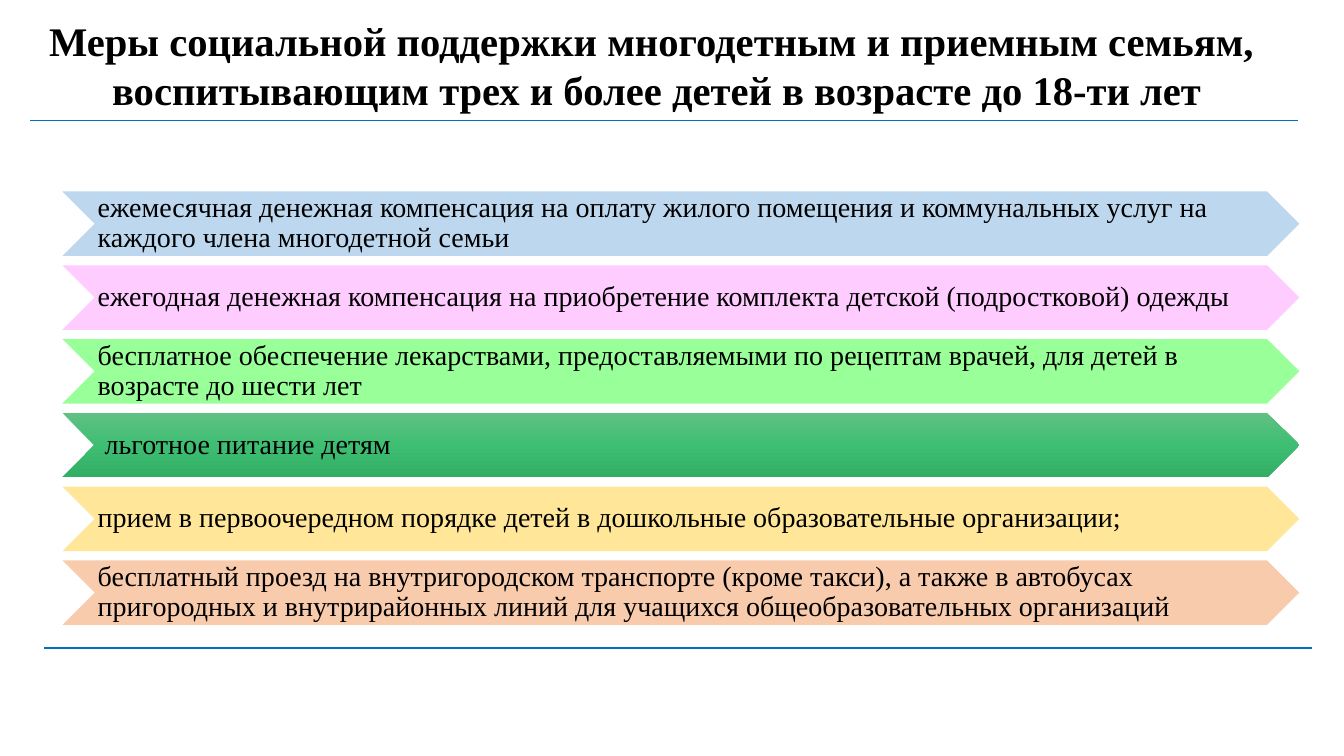
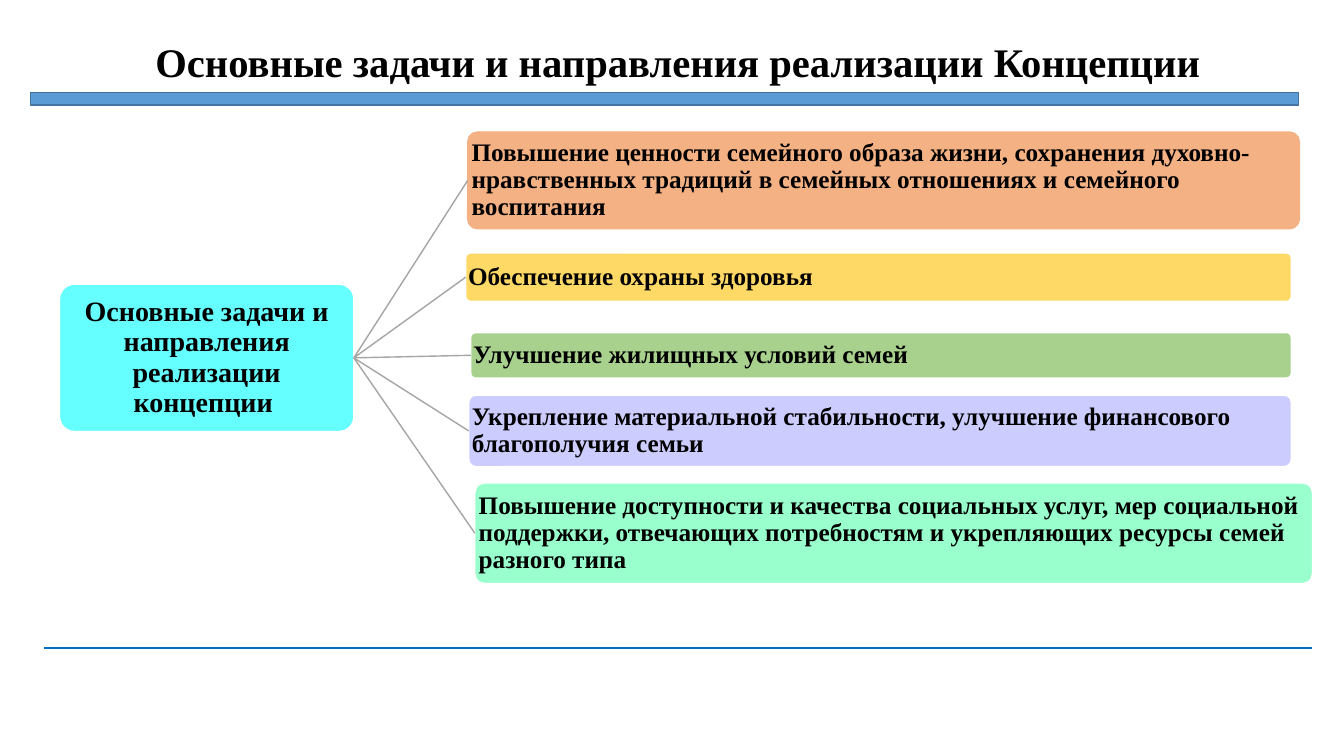
from copy import deepcopy
from dataclasses import dataclass

from pptx import Presentation
from pptx import util as u
from pptx.dml.color import RGBColor
from pptx.enum import shapes, text
from pptx.oxml import ns
from pptx.oxml.xmlchemy import OxmlElement


@dataclass(frozen=True)
class Theme:
    font: str = "Times New Roman"
    ink: str = "000000"
    paper: str = "FFFFFF"
    rule: str = "0070C0"
    bar: str = "5B9BD5"
    bar_edge: str = "43739E"
    link: str = "A5A5A5"
    title_size: int = 29
    large_size: int = 20
    body_size: int = 18
    line_width: int = 1
    tight: float = 0.9


class Board:
    """Draws on the current slide; lengths are percentages of its width and height."""

    RULE_WIDTH = 94.35
    HEAD_LEFT = 2.25
    FOOT_LEFT = 3.3

    def __init__(self, theme):
        self.theme = theme
        self.deck = Presentation()
        self.deck.slide_width, self.deck.slide_height = u.Inches(13.33), u.Inches(7.5)
        self.page = None

    def x(self, share):
        return round(self.deck.slide_width * share / 100)

    def y(self, share):
        return round(self.deck.slide_height * share / 100)

    def place(self, left, top, width, height):
        return self.x(left), self.y(top), self.x(width), self.y(height)

    def new_page(self, title, area, anchor=text.MSO_ANCHOR.MIDDLE, spacing=1.0):
        self.page = self.deck.slides.add_slide(self.deck.slide_layouts[5])
        box = self.page.shapes.title
        box.left, box.top, box.width, box.height = self.place(*area)
        box.text_frame.auto_size = text.MSO_AUTO_SIZE.NONE
        self.set_text(box, title, self.theme.title_size, True,
                      text.PP_ALIGN.CENTER, anchor, spacing)
        self.rule(self.FOOT_LEFT, 85.73)

    def set_text(self, box, words, size, bold, align, anchor, spacing):
        frame = box.text_frame
        frame.text = words
        frame.word_wrap = True
        frame.vertical_anchor = anchor
        for para in frame.paragraphs:
            para.alignment = align
            para.line_spacing = spacing
            para.space_before = u.Pt(0)
            for span in para.runs:
                span.font.name = self.theme.font
                span.font.size = u.Pt(size)
                span.font.bold = bold
                span.font.color.rgb = RGBColor.from_string(self.theme.ink)

    def paint(self, shape, colours):
        """Fill with one colour, or with a top-down gradient of three."""
        fill = shape.fill
        if len(colours) == 1:
            fill.solid()
            fill.fore_color.rgb = RGBColor.from_string(colours[0])
            return
        fill.gradient()
        fill.gradient_angle = 270
        stops = shape._element.spPr.find(".//" + ns.qn("a:gsLst"))
        stops.insert(1, deepcopy(stops[0]))
        for index, (stop, colour) in enumerate(zip(fill.gradient_stops, colours)):
            stop.color.rgb = RGBColor.from_string(colour)
            stop.position = index / 2

    def stroke(self, line, colour):
        line.color.rgb = RGBColor.from_string(colour)
        line.width = u.Pt(self.theme.line_width)

    def shape(self, kind, area, colours, edge=None):
        shape = self.page.shapes.add_shape(kind, *self.place(*area))
        shape.shadow.inherit = False
        self.paint(shape, colours)
        if edge:
            self.stroke(shape.line, edge)
        else:
            shape.line.fill.background()
        return shape

    def label(self, shape, words, size, bold=False, align=text.PP_ALIGN.LEFT, left=0.01):
        frame = shape.text_frame
        frame.margin_left = u.Inches(left)
        frame.margin_right = frame.margin_top = frame.margin_bottom = u.Inches(0.01)
        self.set_text(shape, words, size, bold, align, text.MSO_ANCHOR.MIDDLE,
                      self.theme.tight)

    def chevron(self, area, words, colours):
        shape = self.shape(shapes.MSO_SHAPE.CHEVRON, area, colours)
        self.label(shape, words, self.theme.large_size, left=0.03)

    def card(self, area, words, colour, size, align=text.PP_ALIGN.LEFT, edge=None):
        shape = self.shape(shapes.MSO_SHAPE.ROUNDED_RECTANGLE, area, [colour],
                           edge or self.theme.paper)
        shape.adjustments[0] = 0.1
        self.label(shape, words, size, True, align)
        return shape

    def bar(self, top, height):
        self.shape(shapes.MSO_SHAPE.RECTANGLE, (self.HEAD_LEFT, top, self.RULE_WIDTH, height),
                   [self.theme.bar], self.theme.bar_edge)

    def line(self, colour, start=(0, 0), end=(0, 0)):
        line = self.page.shapes.add_connector(shapes.MSO_CONNECTOR.STRAIGHT, *start, *end)
        self.stroke(line.line, colour)
        line._element.spPr.append(OxmlElement("a:effectLst"))
        return line

    def rule(self, left, top):
        self.line(self.theme.rule, (self.x(left), self.y(top)),
                  (self.x(left + self.RULE_WIDTH), self.y(top)))

    def link(self, source, target):
        """Join the right side of one card to the left side of another."""
        line = self.line(self.theme.link)
        line.begin_connect(source, 3)
        line.end_connect(target, 1)


MEASURES = [
    ("ежемесячная денежная компенсация на оплату жилого помещения и коммунальных услуг "
     "на каждого члена многодетной семьи", ["BDD7EE"]),
    ("ежегодная денежная компенсация на приобретение комплекта детской (подростковой) одежды",
     ["FFCCFF"]),
    ("бесплатное обеспечение лекарствами, предоставляемыми по рецептам врачей, для детей "
     "в возрасте до шести лет", ["99FF99"]),
    (" льготное питание детям", ["60C184", "3EBE73", "32AE65"]),
    ("прием в первоочередном порядке детей в дошкольные образовательные организации;",
     ["FFE699"]),
    ("бесплатный проезд на внутригородском транспорте (кроме такси), а также в автобусах "
     "пригородных и внутрирайонных линий для учащихся общеобразовательных организаций",
     ["F8CBAD"]),
]

# Area, wording, fill and, where it is not white, outline
TASKS = [
    ((34.8, 17.47, 61.88, 12.8),
     "Повышение ценности семейного образа жизни, сохранения духовно-нравственных традиций "
     "в семейных отношениях и семейного воспитания", "F4B183", "F4B183"),
    ((34.65, 33.47, 61.43, 6.4), "Обеспечение охраны здоровья", "FFD966", None),
    ((35.03, 44, 61.05, 6), "Улучшение жилищных условий семей", "A9D18E", None),
    ((34.88, 52.27, 61.2, 9.47),
     "Укрепление материальной стабильности, улучшение финансового благополучия семьи",
     "CCCCFF", None),
    ((35.33, 63.87, 62.33, 13.33),
     "Повышение доступности и качества социальных услуг, мер социальной поддержки, "
     "отвечающих потребностям и укрепляющих ресурсы семей разного типа", "99FFCC", None),
]


def support_measures(board):
    board.new_page("Меры социальной поддержки многодетным и приемным семьям, \n"
                   "воспитывающим трех и более детей в возрасте до 18-ти лет",
                   (1.2, 1.47, 95.4, 14.4), text.MSO_ANCHOR.TOP)
    board.rule(board.HEAD_LEFT, 15.93)
    # Stack of chevrons at an equal pitch
    top, pitch = 25.33, 9.76
    for row, (words, colours) in enumerate(MEASURES):
        board.chevron((4.65, top + row * pitch, 92.03, 8.53), words, colours)


def concept_tasks(board):
    theme = board.theme
    board.new_page("Основные задачи и направления реализации Концепции",
                   (3.3, 2, 94.35, 13.07), spacing=theme.tight)
    board.bar(12.27, 1.6)
    # Hub and its branches
    hub = board.card((4.43, 37.6, 21.9, 19.47),
                     "Основные задачи и направления реализации концепции ",
                     "66FFFF", theme.large_size, text.PP_ALIGN.CENTER)
    for area, words, colour, edge in TASKS:
        task = board.card(area, words, colour, theme.body_size, edge=edge)
        board.link(hub, task)


def main():
    board = Board(Theme())
    support_measures(board)
    concept_tasks(board)
    board.deck.save("out.pptx")


if __name__ == "__main__":
    main()
